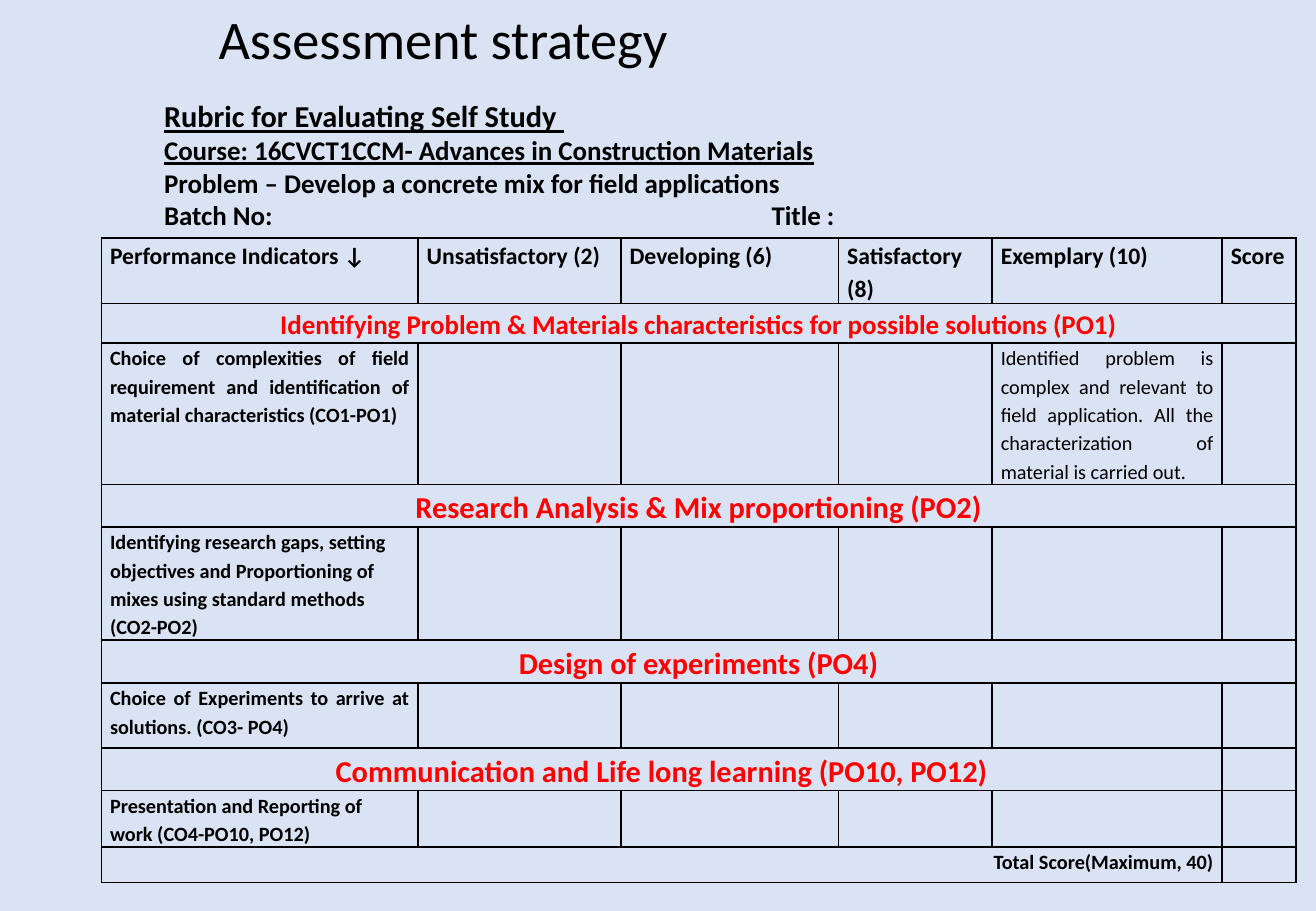
from lxml.etree import SubElement as Sub
from pptx import Presentation
from pptx.dml.color import RGBColor as Rgb
from pptx.enum.text import MSO_ANCHOR as Anchor, PP_ALIGN as Align
from pptx.oxml.ns import qn
from pptx.util import Cm, Pt

BLACK, RED, PALE = "000000", "FF0000", "DAE3F3"
LEFT, MID, RIGHT, JUST = Align.LEFT, Align.CENTER, Align.RIGHT, Align.JUSTIFY


def tint(code):
    return Rgb.from_string(code)


class Page:
    """Holds the font and the current slide, and adds elements to it."""

    def __init__(self, deck, font):
        self.font = font
        self.slide = deck.slides.add_slide(deck.slide_layouts[6])
        fill = self.slide.background.fill
        fill.solid()
        fill.fore_color.rgb = tint(PALE)

    def run(self, para, text, size, color=BLACK, bold=False, under=False):
        run = para.add_run()
        run.text = text
        font = run.font
        font.name, font.size, font.bold = self.font, Pt(size), bold
        font.underline = under
        font.color.rgb = tint(color)

    def text(self, box, lines, gap=1.0, tab=None):
        frame = self.slide.shapes.add_textbox(*map(Cm, box)).text_frame
        frame.word_wrap = True
        frame.vertical_anchor = Anchor.MIDDLE
        for i, (words, style) in enumerate(lines):
            para = frame.add_paragraph() if i else frame.paragraphs[0]
            para.line_spacing = gap
            if tab and "\t" in words:
                stops = Sub(para._p.get_or_add_pPr(), qn("a:tabLst"))
                Sub(stops, qn("a:tab"), pos=str(Cm(tab)), algn="l")
            self.run(para, words, **style)

    def cell(self, cell):
        cell.margin_left = cell.margin_right = Cm(0.18)
        cell.margin_top = cell.margin_bottom = 0
        props = cell._tc.get_or_add_tcPr()
        for side in ("lnL", "lnR", "lnT", "lnB"):
            line = Sub(props, qn(f"a:{side}"), w=str(Pt(1)))
            Sub(Sub(line, qn("a:solidFill")), qn("a:srgbClr"), val=BLACK)
        cell.fill.background()

    def table(self, spot, cols, rows, items):
        size = sum(cols), sum(rows)
        table = self.slide.shapes.add_table(
            len(rows), len(cols), *map(Cm, spot + size)).table
        table.first_row = table.horz_banding = False
        for col, width in zip(table.columns, cols):
            col.width = Cm(width)
        for row, height in zip(table.rows, rows):
            row.height = Cm(height)
        for cell in table.iter_cells():
            self.cell(cell)
        for (row, col), (words, span, align, style) in items.items():
            cell = table.cell(row, col)
            if span > 1:
                cell.merge(table.cell(row, col + span - 1))
            para = cell.text_frame.paragraphs[0]
            para.alignment, para.line_spacing = align, 1.15
            self.run(para, words, **style)
        for cell in table.iter_cells():
            if not cell.text_frame.text:
                para = cell.text_frame.paragraphs[0]
                Sub(para._p, qn("a:endParaRPr"), sz="1200")


def main():
    deck = Presentation()
    deck.slide_width, deck.slide_height = Cm(27.51), Cm(19.05)
    page = Page(deck, "Calibri")
    page.text((4.32, 0.2, 20.45, 1.35),
              [("Assessment strategy", dict(size=32.2))], gap=0.9)

    heads = ["Performance Indicators ↓", "Unsatisfactory (2)",
             "Developing (6)", "Satisfactory (8)", "Exemplary (10)", "Score"]
    bands = [
        (1, "Identifying Problem & Materials characteristics "
            "for possible solutions (PO1)", 6, 16),
        (3, "Research Analysis & Mix proportioning (PO2)", 6, 18),
        (5, "Design of experiments (PO4)", 6, 18),
        (7, "Communication and Life long learning (PO10, PO12)", 5, 18)]
    tasks = [
        (2, "Choice of complexities of field requirement and "
            "identification of material characteristics (CO1-PO1)", JUST),
        (4, "Identifying research gaps, setting objectives and "
            "Proportioning of mixes using standard methods (CO2-PO2)", LEFT),
        (6, "Choice of Experiments to arrive at solutions. (CO3- PO4)", JUST),
        (8, "Presentation and Reporting of work (CO4-PO10, PO12)", LEFT)]
    small = dict(size=12, bold=True)
    items = {(0, i): (head, 1, JUST, dict(size=14, bold=True))
             for i, head in enumerate(heads)}
    for row, words, span, size in bands:
        style = dict(size=size, color=RED, bold=True)
        items[row, 0] = words, span, MID, style
    for row, words, align in tasks:
        items[row, 0] = words, 1, align, small
    items[2, 4] = ("Identified problem is complex and relevant to field "
                   "application. All the characterization of material is "
                   "carried out.", 1, JUST, dict(size=12))
    items[9, 0] = "Total Score(Maximum, 40)", 5, RIGHT, small
    page.table((2.12, 4.98), (6.62, 4.24, 4.55, 3.21, 4.81, 1.54),
               (1.37, 0.82, 2.96, 0.89, 2.36, 0.9, 1.36, 0.89, 1.18, 0.74),
               items)

    plain = dict(size=16, bold=True)
    page.text((3.18, 1.9, 23.7, 3.07), [
        ("Rubric for Evaluating Self Study ",
         dict(size=18, bold=True, under=True)),
        ("Course: 16CVCT1CCM- Advances in Construction Materials",
         dict(size=16, bold=True, under=True)),
        ("Problem – Develop a concrete mix for field applications", plain),
        ("Batch No:\tTitle :", plain)], tab=12.7)
    deck.save("out.pptx")


if __name__ == "__main__":
    main()
